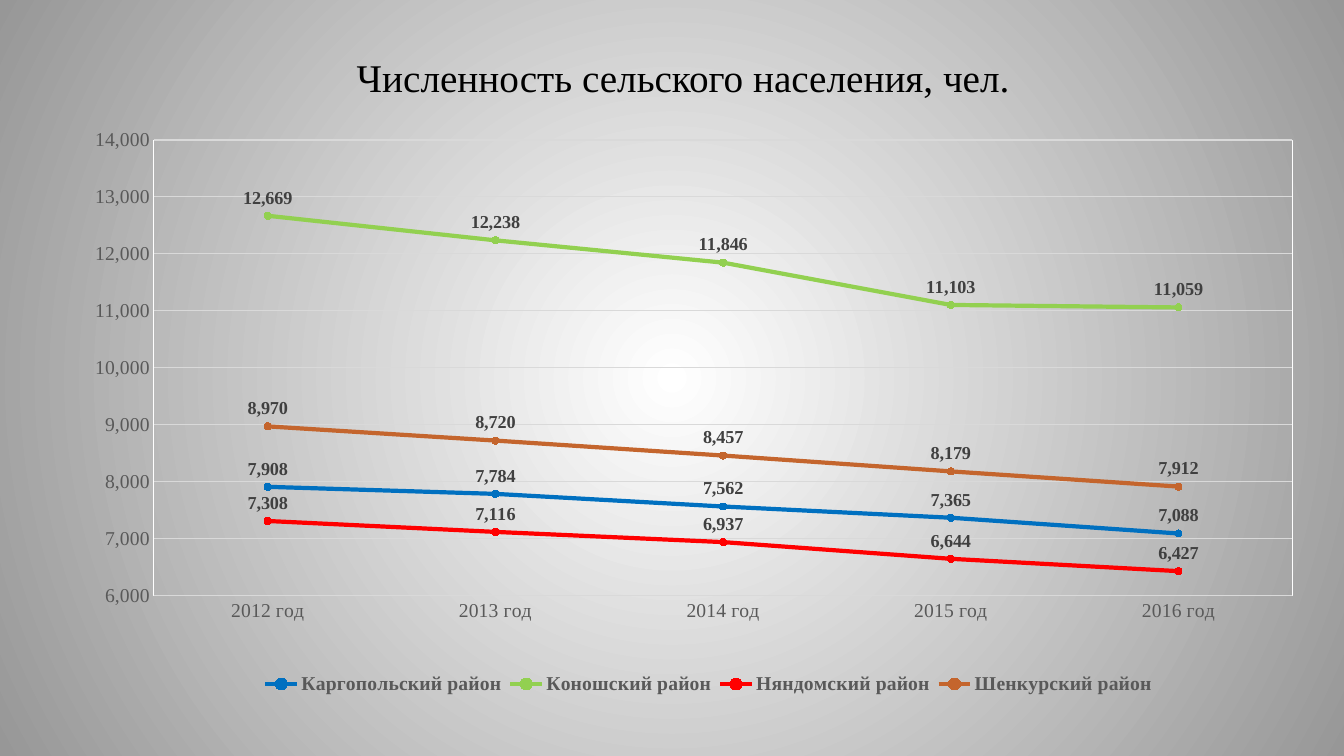
from dataclasses import dataclass

from lxml.etree import SubElement
from pptx import Presentation
from pptx.chart.data import CategoryChartData
from pptx.dml.color import RGBColor
from pptx.enum.chart import (XL_CHART_TYPE, XL_LABEL_POSITION,
                             XL_LEGEND_POSITION, XL_MARKER_STYLE, XL_TICK_MARK)
from pptx.enum.text import MSO_ANCHOR, PP_ALIGN
from pptx.oxml import parse_xml
from pptx.oxml.ns import nsdecls, qn
from pptx.util import Inches, Pt


@dataclass(frozen=True)
class Theme:
    face: str = "Times New Roman"
    title: str = "000000"
    axis: str = "595959"
    label: str = "404040"
    grid: str = "D9D9D9"
    frame: str = "FFFFFF"
    inner: str = "FFFFFF"
    outer: str = "979797"
    title_size: int = 28
    axis_size: int = 14
    label_size: int = 13


THEME = Theme()
YEARS = [f"{year} год" for year in range(2012, 2017)]
AREAS = [
    ("Каргопольский район", "0070C0", (7908, 7784, 7562, 7365, 7088)),
    ("Коношский район", "92D050", (12669, 12238, 11846, 11103, 11059)),
    ("Няндомский район", "FF0000", (7308, 7116, 6937, 6644, 6427)),
    ("Шенкурский район", "C4652D", (8970, 8720, 8457, 8179, 7912)),
]


def style_font(font, size, color, bold=False):
    font.name = THEME.face
    font.size = Pt(size)
    font.bold = bold
    font.color.rgb = RGBColor.from_string(color)


def style_line(line, color, width):
    line.color.rgb = RGBColor.from_string(color)
    line.width = Pt(width)


def fill_back(slide):
    fill = slide.background.fill
    fill.gradient()
    for stop, color in zip(fill.gradient_stops, (THEME.inner, THEME.outer)):
        stop.color.rgb = RGBColor.from_string(color)
    # Turn the linear gradient into a circle from the centre
    grad = next(slide.element.iter(qn("a:gradFill")))
    grad.remove(grad.find(qn("a:lin")))
    ring = SubElement(grad, qn("a:path"), path="circle")
    SubElement(ring, qn("a:fillToRect"),
               {side: "50000" for side in "ltrb"})


def add_title(slide, text):
    box = slide.shapes.add_textbox(Inches(0.68), Inches(0.29),
                                   Inches(12.19), Inches(0.94))
    frame = box.text_frame
    frame.word_wrap = True
    frame.vertical_anchor = MSO_ANCHOR.MIDDLE
    frame.text = text
    para = frame.paragraphs[0]
    para.alignment = PP_ALIGN.CENTER
    style_font(para.runs[0].font, THEME.title_size, THEME.title)


def make_layout(x, y, w, h, inner=False):
    target = '<c:layoutTarget val="inner"/>' if inner else ""
    modes = '<c:xMode val="edge"/><c:yMode val="edge"/>'
    sizes = "".join(f'<c:{key} val="{val}"/>'
                    for key, val in zip("xywh", (x, y, w, h)))
    return parse_xml(f'<c:layout {nsdecls("c")}><c:manualLayout>'
                     f'{target}{modes}{sizes}</c:manualLayout></c:layout>')


def drop_layout(parent):
    old = parent.find(qn("c:layout"))
    if old is not None:
        parent.remove(old)


def style_axis(axis):
    axis.major_tick_mark = axis.minor_tick_mark = XL_TICK_MARK.NONE
    style_font(axis.tick_labels.font, THEME.axis_size, THEME.axis)


def style_series(series, color):
    series.smooth = False
    style_line(series.format.line, color, 3)
    marker = series.marker
    marker.style = XL_MARKER_STYLE.CIRCLE
    marker.size = 5
    marker.format.fill.solid()
    marker.format.fill.fore_color.rgb = RGBColor.from_string(color)
    style_line(marker.format.line, color, 0.75)
    labels = series.data_labels
    labels.show_value = True
    labels.position = XL_LABEL_POSITION.ABOVE
    labels.number_format = "#,##0"
    labels.number_format_is_linked = False
    style_font(labels.font, THEME.label_size, THEME.label, True)


def place_plot(chart):
    area = chart.element.find(".//" + qn("c:plotArea"))
    drop_layout(area)
    area.insert(0, make_layout(0.068, 0.026, 0.907, 0.736, True))
    area.append(parse_xml(
        f'<c:spPr {nsdecls("c", "a")}><a:noFill/><a:ln w="9525"><a:solidFill>'
        f'<a:srgbClr val="{THEME.frame}"/></a:solidFill></a:ln></c:spPr>'))


def add_legend(chart):
    chart.has_legend = True
    legend = chart.legend
    legend.position = XL_LEGEND_POSITION.BOTTOM
    legend.include_in_layout = False
    style_font(legend.font, THEME.axis_size, THEME.axis, True)
    root = chart.element.find(".//" + qn("c:legend"))
    drop_layout(root)
    root.find(qn("c:legendPos")).addnext(make_layout(0.15, 0.87, 0.72, 0.07))


def add_lines(slide):
    data = CategoryChartData(number_format="#,##0")
    data.categories = YEARS
    for name, _, counts in AREAS:
        data.add_series(name, counts)
    chart = slide.shapes.add_chart(
        XL_CHART_TYPE.LINE_MARKERS, Inches(0.68), Inches(1.23),
        Inches(12.45), Inches(6.14), data).chart
    chart.has_title = False
    style_font(chart.font, THEME.axis_size, THEME.axis)
    chart.plots[0].vary_by_categories = False

    # Axes
    style_axis(chart.category_axis)
    style_line(chart.category_axis.format.line, THEME.grid, 0.75)
    axis = chart.value_axis
    style_axis(axis)
    axis.format.line.fill.background()
    axis.minimum_scale, axis.maximum_scale = 6000, 14000
    axis.major_unit = 1000
    axis.tick_labels.number_format = "#,##0"
    axis.tick_labels.number_format_is_linked = False
    style_line(axis.major_gridlines.format.line, THEME.grid, 0.75)

    # Series, plot frame and legend
    for series, (_, color, _) in zip(chart.plots[0].series, AREAS):
        style_series(series, color)
    place_plot(chart)
    add_legend(chart)


def main():
    deck = Presentation()
    deck.slide_width, deck.slide_height = Inches(13.33), Inches(7.5)
    slide = deck.slides.add_slide(deck.slide_layouts[6])
    fill_back(slide)
    add_title(slide, "Численность сельского населения, чел.")
    add_lines(slide)
    deck.save("out.pptx")


if __name__ == "__main__":
    main()
